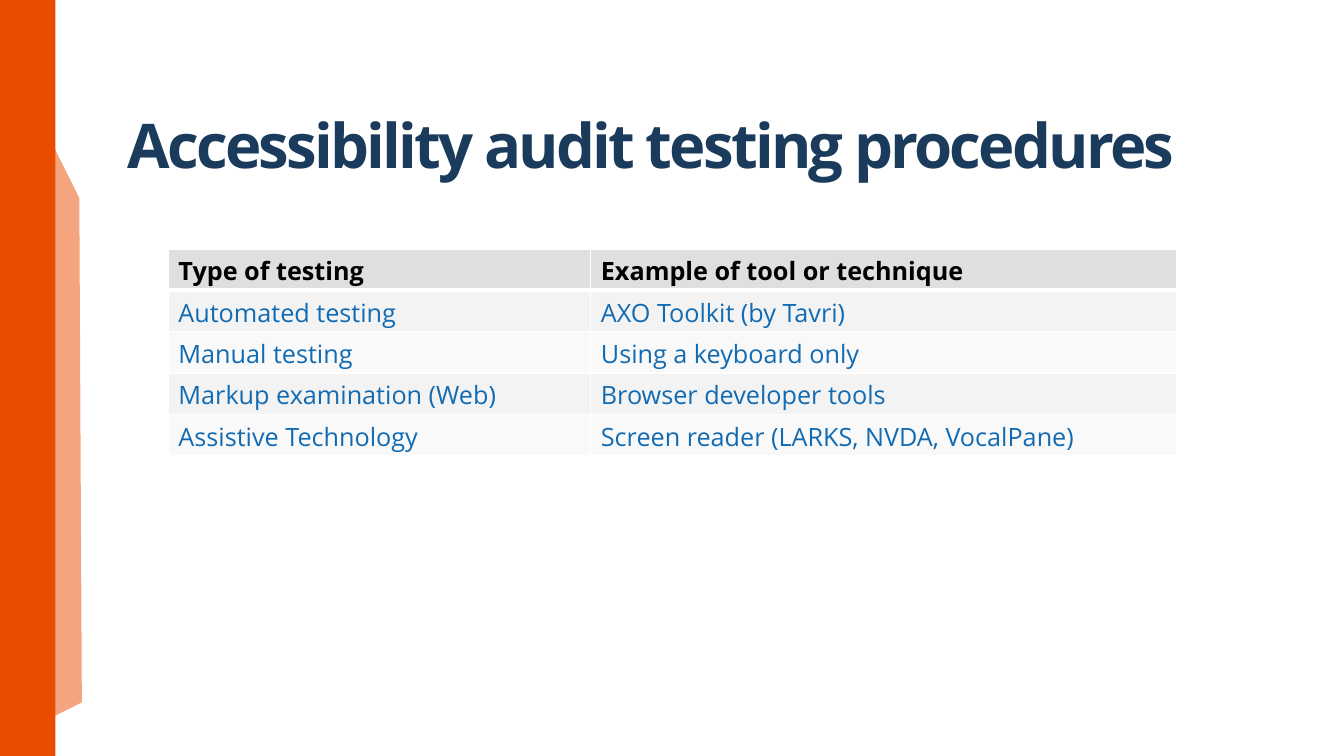
"""Build the slide on accessibility audit testing procedures."""
from dataclasses import dataclass

from lxml.etree import SubElement
from pptx import Presentation
from pptx.dml.color import RGBColor
from pptx.enum.shapes import MSO_SHAPE
from pptx.enum.text import MSO_ANCHOR
from pptx.oxml.ns import qn
from pptx.util import Inches, Pt

FONT = "Open Sans"
ORANGE, NAVY, BLUE, BLACK, WHITE = "EB4D00", "1A3B5B", "126BB2", "000000", "FFFFFF"
HEADER_FILL, ODD_FILL, EVEN_FILL = "DFDFDF", "F3F3F3", "F9F9F9"
COLUMN_WIDTHS = (4.19, 5.81)
ROW_HEIGHT = 0.41


@dataclass
class Band:
    shape: MSO_SHAPE
    left: float
    top: float
    width: float
    height: float
    rotation: float = 0
    stripe: float | None = None
    opacity: int = 100


BANDS = [
    Band(MSO_SHAPE.RECTANGLE, 0, 0, 0.55, 7.5),
    Band(MSO_SHAPE.DIAGONAL_STRIPE, -0.81, 1.61, 2.57, 5.22, 153.5, 0.86, 50),
]


@dataclass
class Procedure:
    kind: str
    example: str


PROCEDURES = [
    Procedure("Type of testing", "Example of tool or technique"),
    Procedure("Automated testing", "AXO Toolkit (by Tavri)"),
    Procedure("Manual testing", "Using a keyboard only"),
    Procedure("Markup examination (Web)", "Browser developer tools"),
    Procedure("Assistive Technology", "Screen reader (LARKS, NVDA, VocalPane)"),
]


def rgb(color: str) -> RGBColor:
    return RGBColor.from_string(color)


def add_run(p, text: str, size: float, color: str, bold: bool):
    r = p.add_run()
    r.text = text
    r.font.name = FONT
    r.font.size = Pt(size)
    r.font.bold = bold
    r.font.color.rgb = rgb(color)
    return r


def add_band(s, band: Band) -> None:
    sp = s.shapes.add_shape(band.shape, Inches(band.left), Inches(band.top),
                            Inches(band.width), Inches(band.height))
    sp.shadow.inherit = False
    sp.rotation = band.rotation
    if band.stripe is not None:
        sp.adjustments[0] = band.stripe
    sp.fill.solid()
    sp.fill.fore_color.rgb = rgb(ORANGE)
    sp.line.fill.background()
    if band.opacity < 100:
        color = sp.fill._xPr.find(f"{qn('a:solidFill')}/{qn('a:srgbClr')}")
        SubElement(color, qn("a:alpha"), val=str(band.opacity * 1000))


def add_title(s, text: str) -> None:
    sp = s.shapes.add_textbox(Inches(1.17), Inches(0.4), Inches(11), Inches(1.45))
    tf = sp.text_frame
    tf.word_wrap = True
    tf.vertical_anchor = MSO_ANCHOR.BOTTOM
    p = tf.paragraphs[0]
    p.line_spacing = 0.9
    r = add_run(p, text, 44, NAVY, True)
    r.font._element.set("spc", "-200")


def add_borders(cell, top: float, bottom: float) -> None:
    tc_pr = cell._tc.get_or_add_tcPr()
    for side, width in (("L", 1), ("R", 1), ("T", top), ("B", bottom)):
        ln = SubElement(tc_pr, qn(f"a:ln{side}"), w=str(Pt(width)))
        fill = SubElement(ln, qn("a:solidFill"))
        SubElement(fill, qn("a:srgbClr"), val=WHITE)


def add_procedures(s, procedures: list[Procedure]) -> None:
    table = s.shapes.add_table(
        len(procedures), len(COLUMN_WIDTHS), Inches(1.67), Inches(2.47),
        Inches(sum(COLUMN_WIDTHS)), Inches(ROW_HEIGHT * len(procedures))).table
    for column, width in zip(table.columns, COLUMN_WIDTHS):
        column.width = Inches(width)
    for i, procedure in enumerate(procedures):
        table.rows[i].height = Inches(ROW_HEIGHT)
        header = i == 0
        fill = HEADER_FILL if header else ODD_FILL if i % 2 else EVEN_FILL
        for j, text in enumerate((procedure.kind, procedure.example)):
            cell = table.cell(i, j)
            add_borders(cell, 3 if i == 1 else 1, 3 if header else 1)
            cell.fill.solid()
            cell.fill.fore_color.rgb = rgb(fill)
            add_run(cell.text_frame.paragraphs[0], text, 18,
                    BLACK if header else BLUE, header)


def main() -> None:
    prs = Presentation()
    prs.slide_width, prs.slide_height = Inches(13.33), Inches(7.5)
    s = prs.slides.add_slide(prs.slide_layouts[6])
    for band in BANDS:
        add_band(s, band)
    add_title(s, "Accessibility audit testing procedures")
    add_procedures(s, PROCEDURES)
    prs.save("out.pptx")


if __name__ == "__main__":
    main()
